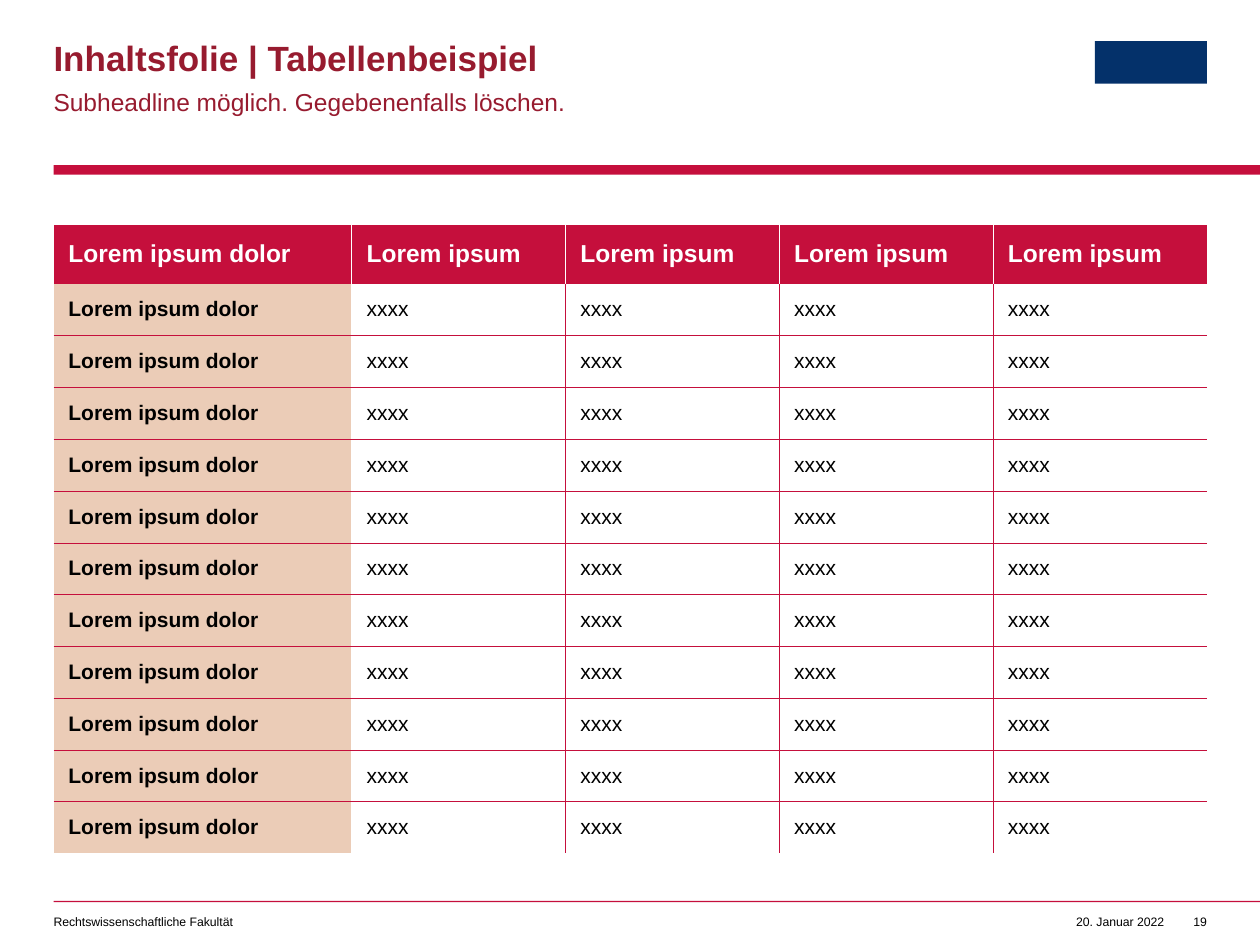
from lxml.etree import SubElement
from pptx import Presentation
from pptx.dml.color import RGBColor
from pptx.enum.shapes import MSO_SHAPE
from pptx.enum.text import MSO_ANCHOR, PP_ALIGN
from pptx.oxml.ns import qn
from pptx.util import Cm, Pt

RED, WINE, SAND = "C50F3C", "971B2F", "EBCCB7"
NAVY, WHITE, BLACK = "04316A", "FFFFFF", "000000"
LEFT, WIDE = 1.08, 25.4


def paint(fill, tone):
    fill.solid()
    fill.fore_color.rgb = RGBColor.from_string(tone)


def apply(item, **values):
    for name, value in values.items():
        setattr(item, name, value)


class Deck:
    font = "Arial"

    def __init__(self, width, height):
        self.file = Presentation()
        apply(self.file, slide_width=Cm(width), slide_height=Cm(height))
        self.slide = self.file.slides.add_slide(self.file.slide_layouts[6])

    def style(self, font, size, tone, bold=False):
        apply(font, name=self.font, size=Pt(size), bold=bold)
        paint(font.fill, tone)

    def bar(self, box, tone):
        shape = self.slide.shapes.add_shape(MSO_SHAPE.RECTANGLE, *map(Cm, box))
        paint(shape.fill, tone)
        shape.line.fill.background()
        shape.shadow.inherit = False

    def text(self, words, box, size, tone, bold=False, wrap=True, **form):
        frame = self.slide.shapes.add_textbox(*map(Cm, box)).text_frame
        apply(frame, word_wrap=wrap, margin_left=0, margin_top=0,
              margin_right=0, margin_bottom=0)
        para = frame.paragraphs[0]
        apply(para, **form)
        run = para.add_run()
        run.text = words
        self.style(run.font, size, tone, bold)

    def edge(self, cell, side, rule):
        props = cell._tc.get_or_add_tcPr()
        line = SubElement(props, qn("a:ln" + side))
        if rule:
            tone, width = rule
            line.set("w", str(Pt(width)))
            fill = SubElement(line, qn("a:solidFill"))
            SubElement(fill, qn("a:srgbClr")).set("val", tone)
        else:
            SubElement(line, qn("a:noFill"))

    def cell(self, cell, words, size, tone, bold, back, edges):
        apply(cell, text=words, vertical_anchor=MSO_ANCHOR.MIDDLE,
              margin_left=Cm(0.3), margin_right=Cm(0.3),
              margin_top=Cm(0.1), margin_bottom=Cm(0.1))
        self.style(cell.text_frame.paragraphs[0].runs[0].font, size, tone, bold)
        for side, rule in edges.items():
            self.edge(cell, side, rule)
        if back:
            paint(cell.fill, back)
        else:
            cell.fill.background()

    def table(self, data, left, top, cols, rows):
        count, span = len(rows), len(cols)
        box = map(Cm, (left, top, sum(cols), sum(rows)))
        grid = self.slide.shapes.add_table(count, span, *box).table
        apply(grid, horz_banding=False)
        for col, width in zip(grid.columns, cols):
            col.width = Cm(width)
        for row, height in zip(grid.rows, rows):
            row.height = Cm(height)

        def upright(row, col):
            if col in (0, span):
                return None
            if row == 0:
                return WHITE, 0.5
            return (WHITE, 1) if col == 1 else (RED, 0.25)

        def level(row):
            return (RED, 0.25) if 1 < row < count else None

        for i, line in enumerate(data):
            for j, words in enumerate(line):
                size, tone = (12, BLACK) if i else (14, WHITE)
                back = RED if i == 0 else SAND if j == 0 else None
                edges = {"L": upright(i, j), "R": upright(i, j + 1),
                         "T": level(i), "B": level(i + 1)}
                self.cell(grid.cell(i, j), words, size, tone, i * j == 0, back, edges)


def main():
    deck = Deck(WIDE, 19.05)
    deck.bar((LEFT, 3.33, WIDE - LEFT, 0.19), RED)
    deck.bar((LEFT, 18.16, WIDE - LEFT, 0.03), RED)
    deck.bar((22.07, 0.83, 2.26, 0.86), NAVY)

    deck.text("Inhaltsfolie | Tabellenbeispiel", (LEFT, 0.83, 14.25, 0.76),
              20, WINE, bold=True, line_spacing=0.9)
    deck.text("Subheadline möglich. Gegebenenfalls löschen.", (LEFT, 1.7, 14.25, 0.6),
              14, WINE, line_spacing=1.1, space_after=Pt(8))

    foot = [("Rechtswissenschaftliche Fakultät", LEFT, 11.4, PP_ALIGN.LEFT),
            ("20. Januar 2022", 21.67, 1.8, PP_ALIGN.RIGHT),
            ("19", 23.83, 0.5, PP_ALIGN.RIGHT)]
    for words, left, width, side in foot:
        deck.text(words, (left, 18.44, width, 0.3), 7, BLACK, wrap=False, alignment=side)

    head, body = 1.19, 11
    data = [["Lorem ipsum dolor"] + ["Lorem ipsum"] * 4]
    data += [["Lorem ipsum dolor"] + ["xxxx"] * 4] * body
    rows = [head] + [(12.68 - head) / body] * body
    deck.table(data, LEFT, 4.53, [6.01] + [4.31] * 4, rows)
    deck.file.save("out.pptx")


if __name__ == "__main__":
    main()
